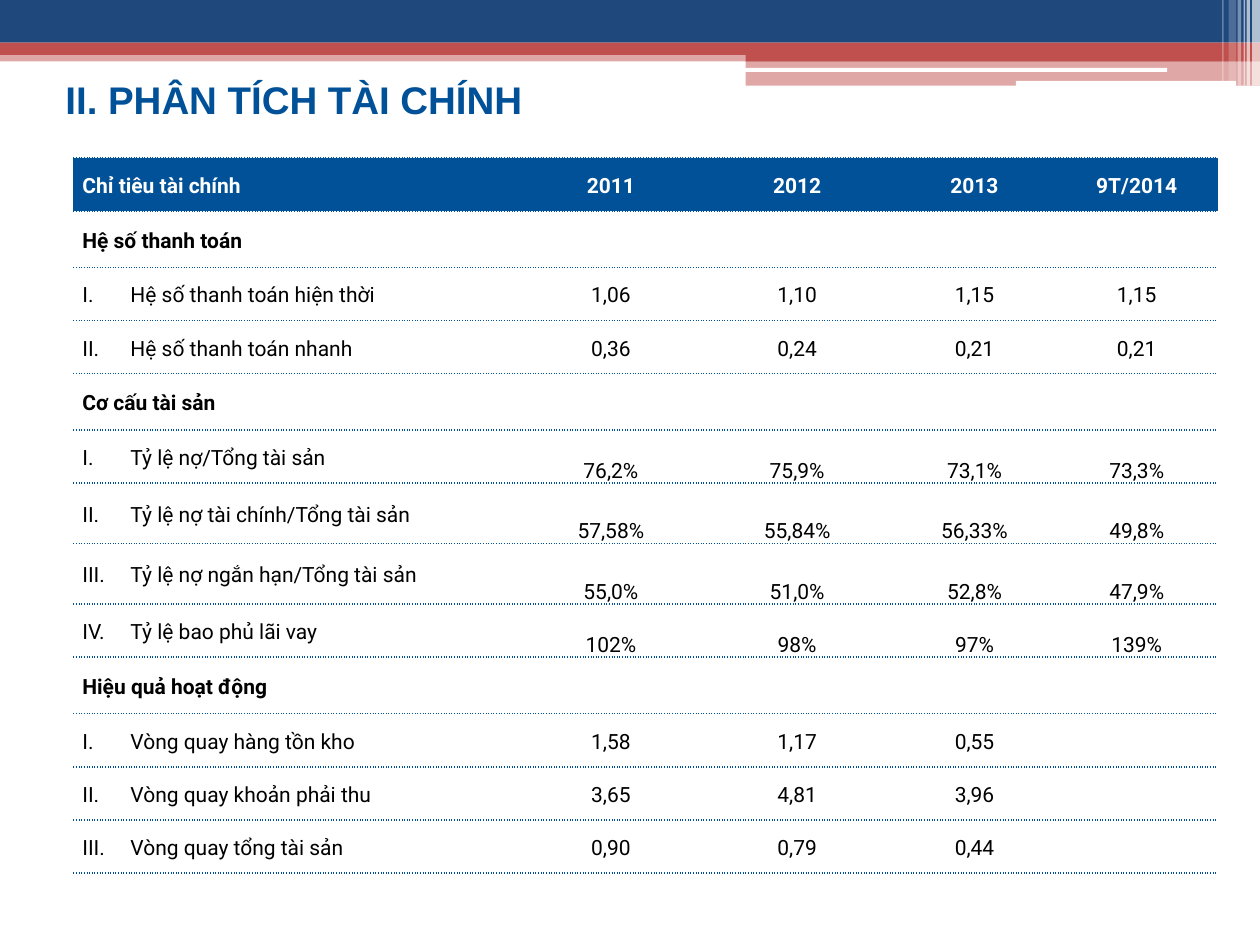
from lxml.etree import SubElement
from pptx import Presentation
from pptx.dml.color import RGBColor
from pptx.enum.shapes import MSO_SHAPE
from pptx.enum.text import MSO_ANCHOR, PP_ALIGN
from pptx.oxml import parse_xml
from pptx.oxml.ns import nsdecls, qn
from pptx.util import Cm, Pt

COLORS = {"navy": "1F497D", "red": "C0504D", "blue": "005197",
          "white": "FFFFFF", "black": "000000"}

BANDS = [
    (0, 1.02, 25.4, 0.22, "red", 50),
    (0, 0, 25.4, 0.86, "navy", 100),
    (0, 0.86, 25.4, 0.25, "red", 100),
    (15.03, 0.99, 10.37, 0.25, "red", 100),
    (15.03, 1.23, 10.37, 0.5, "red", 50),
]
PILLS = [(15.02, 1.37, 8.51, 0.08), (20.48, 1.63, 4.44, 0.1)]
STRIPES = [(25.24, 0.16, 1.73, 65), (25.13, 0.07, 1.73, 65), (25.07, 0.03, 1.73, 60),
           (24.95, 0.07, 1.73, 40), (24.77, 0.15, 1.63, 20), (24.64, 0.03, 1.63, 30)]

HEADER = ["Chỉ tiêu tài chính", "2011", "2012", "2013", "9T/2014"]
SECTIONS = [
    ("Hệ số thanh toán", MSO_ANCHOR.MIDDLE, [
        ("Hệ số thanh toán hiện thời", "1,06", "1,10", "1,15", "1,15"),
        ("Hệ số thanh toán nhanh", "0,36", "0,24", "0,21", "0,21"),
    ]),
    ("Cơ cấu tài sản", MSO_ANCHOR.BOTTOM, [
        ("Tỷ lệ nợ/Tổng tài sản", "76,2%", "75,9%", "73,1%", "73,3%"),
        ("Tỷ lệ nợ tài chính/Tổng tài sản", "57,58%", "55,84%", "56,33%", "49,8%"),
        ("Tỷ lệ nợ ngắn hạn/Tổng tài sản", "55,0%", "51,0%", "52,8%", "47,9%"),
        ("Tỷ lệ bao phủ lãi vay", "102%", "98%", "97%", "139%"),
    ]),
    ("Hiệu quả hoạt động", MSO_ANCHOR.MIDDLE, [
        ("Vòng quay hàng tồn kho", "1,58", "1,17", "0,55", ""),
        ("Vòng quay khoản phải thu", "3,65", "4,81", "3,96", ""),
        ("Vòng quay tổng tài sản", "0,90", "0,79", "0,44", ""),
    ]),
]
COLUMN_WIDTHS = [9.02, 3.63, 3.88, 3.27, 3.27]
ROW_HEIGHTS = [1.07, 1.14, 1.07, 1.07, 1.14, 1.07, 1.22, 1.22, 1.07, 1.14, 1.07, 1.07, 1.07]


def write(frame, text, size=12, font="Roboto", color="black", bold=False,
          align=PP_ALIGN.LEFT, spacing=1.15, after=0, number=None):
    """Write one formatted paragraph, numbered in Roman numerals if asked."""
    para = frame.paragraphs[0]
    para.alignment = align
    para.line_spacing = spacing
    para.space_after = Pt(after)
    span = para.add_run()
    span.text = text
    span.font.size = Pt(size)
    span.font.name = font
    span.font.bold = bold
    span.font.color.rgb = RGBColor.from_string(COLORS[color])
    if number:
        properties = para._p.get_or_add_pPr()
        properties.set("marL", str(Cm(0.97)))
        properties.set("indent", str(Cm(-0.97)))
        SubElement(properties, qn("a:buFont"), typeface=font)
        SubElement(properties, qn("a:buAutoNum"), type="romanUcPeriod", startAt=str(number))


class Painter:
    """Hold the style and the current slide."""

    def __init__(self, page, colors):
        self.page = page
        self.colors = colors

    def bar(self, left, top, width, height, color, opacity=100, kind=MSO_SHAPE.RECTANGLE):
        """Add a borderless bar."""
        shape = self.page.shapes.add_shape(kind, Cm(left), Cm(top), Cm(width), Cm(height))
        shape.shadow.inherit = False
        shape.line.fill.background()
        shape.fill.solid()
        shape.fill.fore_color.rgb = RGBColor.from_string(self.colors[color])
        if opacity < 100:
            tint = shape._element.spPr.find(qn("a:solidFill"))[0]
            SubElement(tint, qn("a:alpha"), val=str(opacity * 1000))

    def title(self, text, left, top, width, height, indent):
        """Add the slide title."""
        box = self.page.shapes.add_textbox(Cm(left), Cm(top), Cm(width), Cm(height))
        frame = box.text_frame
        frame.word_wrap = True
        frame.vertical_anchor = MSO_ANCHOR.MIDDLE
        frame.margin_left = Cm(indent)
        write(frame, text, size=22, font="Arial", color="blue", bold=True, spacing=1)

    def table(self, left, top, widths, heights):
        """Add an empty table with the given grid."""
        frame = self.page.shapes.add_table(len(heights), len(widths), Cm(left), Cm(top),
                                           Cm(sum(widths)), Cm(sum(heights)))
        grid = frame.table
        for column, width in zip(grid.columns, widths):
            column.width = Cm(width)
        for row, height in zip(grid.rows, heights):
            row.height = Cm(height)
        return grid

    def cell(self, cell, text, anchor=MSO_ANCHOR.MIDDLE, fill=None, **style):
        """Fill one table cell and rule it above and below."""
        cell.margin_left = cell.margin_right = Cm(0.18)
        cell.margin_top = cell.margin_bottom = 0
        cell.vertical_anchor = anchor
        if fill:
            cell.fill.solid()
            cell.fill.fore_color.rgb = RGBColor.from_string(self.colors[fill])
        else:
            cell.fill.background()
        ruled = (f'<a:solidFill><a:srgbClr val="{self.colors["blue"]}"/></a:solidFill>'
                 '<a:prstDash val="sysDot"/>')
        sides = {"lnL": "<a:noFill/>", "lnR": "<a:noFill/>", "lnT": ruled, "lnB": ruled}
        for place, (side, content) in enumerate(sides.items()):
            border = parse_xml(f'<a:{side} {nsdecls("a")} w="{Pt(1)}">{content}</a:{side}>')
            cell._tc.get_or_add_tcPr().insert(place, border)
        write(cell.text_frame, text, **style)

    def row(self, row, values, label_style, anchor=MSO_ANCHOR.MIDDLE, **style):
        """Fill a row: a label at left, then centred figures."""
        label, *figures = row.cells
        self.cell(label, values[0], **style, **label_style)
        for cell, value in zip(figures, values[1:]):
            self.cell(cell, value, anchor=anchor, align=PP_ALIGN.CENTER, **style)


def main():
    """Build the slide and save it."""
    deck = Presentation()
    deck.slide_width, deck.slide_height = Cm(25.4), Cm(19.05)
    page = deck.slides.add_slide(deck.slide_layouts[6])
    painter = Painter(page, COLORS)

    for band in BANDS:
        painter.bar(*band)
    for pill in PILLS:
        painter.bar(*pill, "white", kind=MSO_SHAPE.ROUNDED_RECTANGLE)
    for left, width, height, opacity in STRIPES:
        painter.bar(left, 0, width, height, "white", opacity)

    grid = painter.table(1.48, 3.18, COLUMN_WIDTHS, ROW_HEIGHTS)
    rows = iter(grid.rows)
    painter.row(next(rows), HEADER, {"after": 3}, fill="blue", color="white", bold=True)
    for heading, anchor, items in SECTIONS:
        painter.row(next(rows), [heading, "", "", "", ""], {}, bold=True)
        for number, item in enumerate(items, 1):
            painter.row(next(rows), item, {"number": number}, anchor=anchor)

    painter.title("II. PHÂN TÍCH TÀI CHÍNH", 0, 1.27, 25.4, 1.47, indent=1.32)
    deck.save("out.pptx")


if __name__ == "__main__":
    main()
